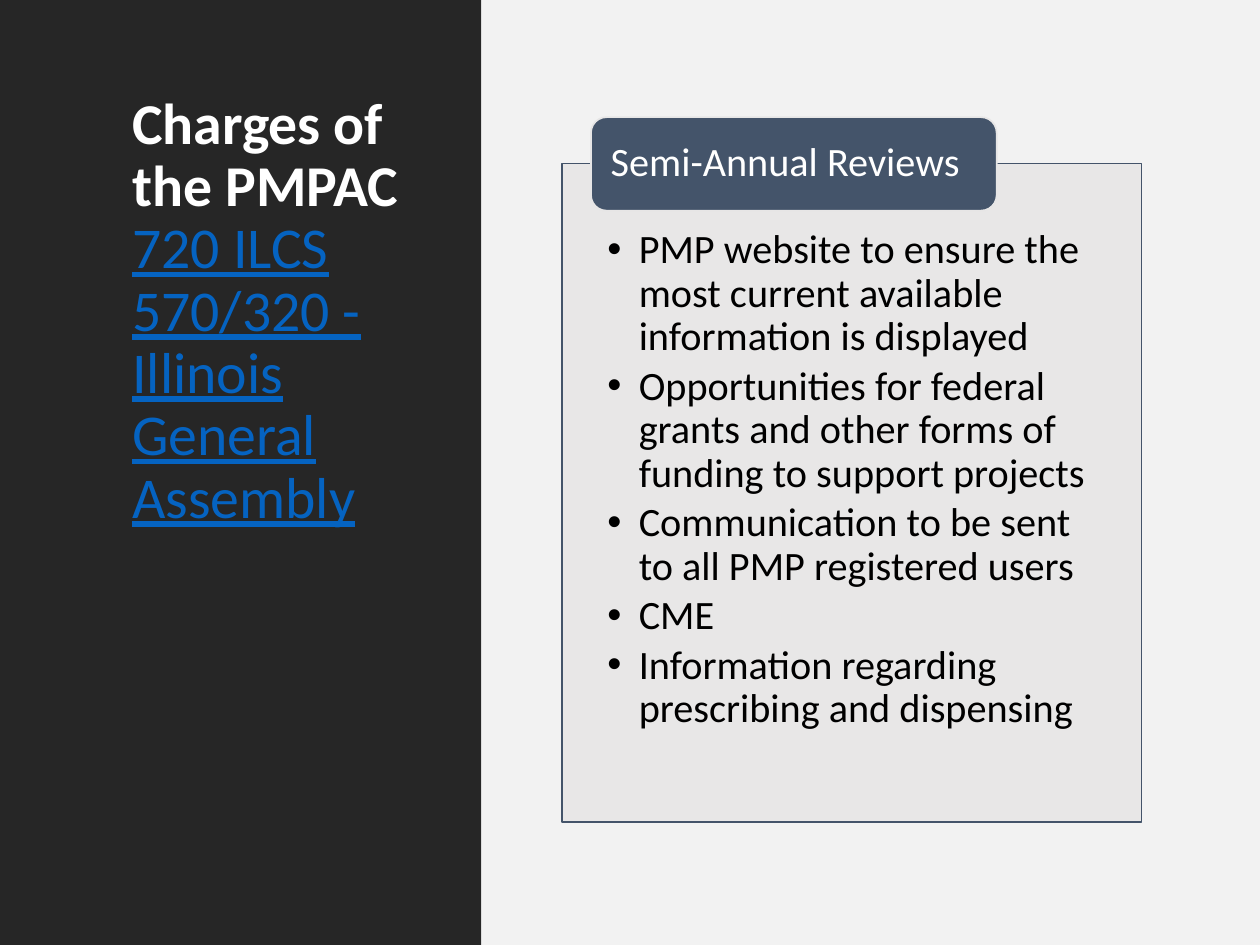
from dataclasses import dataclass

import pptx
import pptx.dml.color
import pptx.enum.shapes
import pptx.enum.text
import pptx.oxml
import pptx.oxml.ns
import pptx.util

Inches, Pt = pptx.util.Inches, pptx.util.Pt
RGB = pptx.dml.color.RGBColor.from_string
SHAPES = pptx.enum.shapes.MSO_SHAPE
TEXT = pptx.enum.text

SLIDE_W, SLIDE_H = 10, 7.5


@dataclass(frozen=True)
class Theme:
    font: str = "Calibri"
    dark: str = "262626"
    light: str = "F2F2F2"
    panel: str = "E7E6E6"
    accent: str = "44546A"
    link: str = "0563C1"
    white: str = "FFFFFF"
    black: str = "000000"
    title_size: int = 33
    body_size: int = 23


@dataclass(frozen=True)
class Area:
    """A rectangle given as shares of the slide's width and height."""
    left: float
    top: float
    width: float
    height: float

    def lengths(self) -> tuple:
        return (Inches(self.left * SLIDE_W), Inches(self.top * SLIDE_H),
                Inches(self.width * SLIDE_W), Inches(self.height * SLIDE_H))


THEME = Theme()
SPLIT = 0.382
TITLE_AREA = Area(0.095, 0.093, 0.238, 0.813)
REVIEWS_AREA = Area(0.446, 0.173, 0.46, 0.697)
HEADING_AREA = Area(0.469, 0.124, 0.322, 0.099)
BACKDROPS = [(Area(0, 0, SPLIT, 1), THEME.dark),
             (Area(SPLIT, 0, 1 - SPLIT, 1), THEME.light)]
REVIEWS = [
    "PMP website to ensure the most current available information is displayed",
    "Opportunities for federal grants and other forms of funding to support projects",
    "Communication to be sent to all PMP registered users",
    "CME",
    "Information regarding prescribing and dispensing",
]


def place(shape, area: Area) -> None:
    shape.left, shape.top, shape.width, shape.height = area.lengths()


def paint(shape, fill: str, line: str | None = None) -> None:
    shape.fill.solid()
    shape.fill.fore_color.rgb = RGB(fill)
    if line:
        shape.line.color.rgb = RGB(line)
        shape.line.width = Pt(1)
    else:
        shape.line.fill.background()


def set_frame(frame, anchor, insets: tuple) -> None:
    frame.word_wrap = True
    frame.auto_size = TEXT.MSO_AUTO_SIZE.NONE
    frame.vertical_anchor = anchor
    (frame.margin_left, frame.margin_top,
     frame.margin_right, frame.margin_bottom) = map(Inches, insets)


def set_paragraph(paragraph, after: float = 0) -> None:
    paragraph.alignment = TEXT.PP_ALIGN.LEFT
    paragraph.line_spacing = 0.9
    paragraph.space_before = Pt(0)
    paragraph.space_after = Pt(after)


def add_run(paragraph, text: str, size: int, color: str,
            bold: bool = False, underline: bool = False) -> None:
    run = paragraph.add_run()
    run.text = text
    font = run.font
    font.name, font.size = THEME.font, Pt(size)
    font.bold, font.underline = bold, underline
    font.color.rgb = RGB(color)


def add_bullet(paragraph, indent: float) -> None:
    properties = paragraph._p.get_or_add_pPr()
    properties.set("marL", str(Inches(indent)))
    properties.set("indent", str(-Inches(indent)))
    namespace = pptx.oxml.ns.nsdecls("a")
    for tag in ('buFont {} typeface="Arial"', 'buChar {} char="•"'):
        properties.append(pptx.oxml.parse_xml(f"<a:{tag.format(namespace)}/>"))


def set_opacity(shape, percent: int) -> None:
    color = shape.fill._xPr.find(".//" + pptx.oxml.ns.qn("a:srgbClr"))
    alpha = color.makeelement(pptx.oxml.ns.qn("a:alpha"), {"val": str(percent * 1000)})
    color.append(alpha)


def draw_backdrops(slide) -> None:
    for position, (area, color) in enumerate(BACKDROPS, start=2):
        backdrop = slide.shapes.add_shape(SHAPES.RECTANGLE, *area.lengths())
        backdrop.shadow.inherit = False
        paint(backdrop, color)
        # Move behind the placeholders
        slide.shapes._spTree.insert(position, backdrop._element)


def draw_title(slide) -> None:
    title = slide.shapes.title
    place(title, TITLE_AREA)
    set_frame(title.text_frame, TEXT.MSO_ANCHOR.TOP, (0.1, 0.05, 0.1, 0.05))
    heading = title.text_frame.paragraphs[0]
    set_paragraph(heading)
    add_run(heading, "Charges of the PMPAC", THEME.title_size, THEME.white, bold=True)
    heading.add_line_break()
    add_run(heading, "720 ILCS 570/320 - Illinois General Assembly",
            THEME.title_size, THEME.link, underline=True)


def draw_reviews(slide) -> None:
    # Bulleted panel
    reviews = slide.placeholders[1]
    place(reviews, REVIEWS_AREA)
    paint(reviews, THEME.panel, THEME.accent)
    set_opacity(reviews, 90)
    frame = reviews.text_frame
    set_frame(frame, TEXT.MSO_ANCHOR.TOP, (0.36, 0.52, 0.36, 0.18))
    for index, review in enumerate(REVIEWS):
        item = frame.add_paragraph() if index else frame.paragraphs[0]
        set_paragraph(item, after=0.15 * THEME.body_size)
        add_bullet(item, 0.25)
        add_run(item, review, THEME.body_size, THEME.black)

    # Heading over the panel's top edge
    heading = slide.shapes.add_shape(SHAPES.ROUNDED_RECTANGLE, *HEADING_AREA.lengths())
    heading.shadow.inherit = False
    paint(heading, THEME.accent, THEME.panel)
    set_frame(heading.text_frame, TEXT.MSO_ANCHOR.MIDDLE, (0.12, 0, 0.12, 0))
    label = heading.text_frame.paragraphs[0]
    set_paragraph(label)
    add_run(label, "Semi-Annual Reviews", THEME.body_size, THEME.white)


def main() -> None:
    deck = pptx.Presentation()
    deck.slide_width, deck.slide_height = Inches(SLIDE_W), Inches(SLIDE_H)
    slide = deck.slides.add_slide(deck.slide_layouts[1])
    draw_backdrops(slide)
    draw_title(slide)
    draw_reviews(slide)
    deck.save("out.pptx")


if __name__ == "__main__":
    main()
